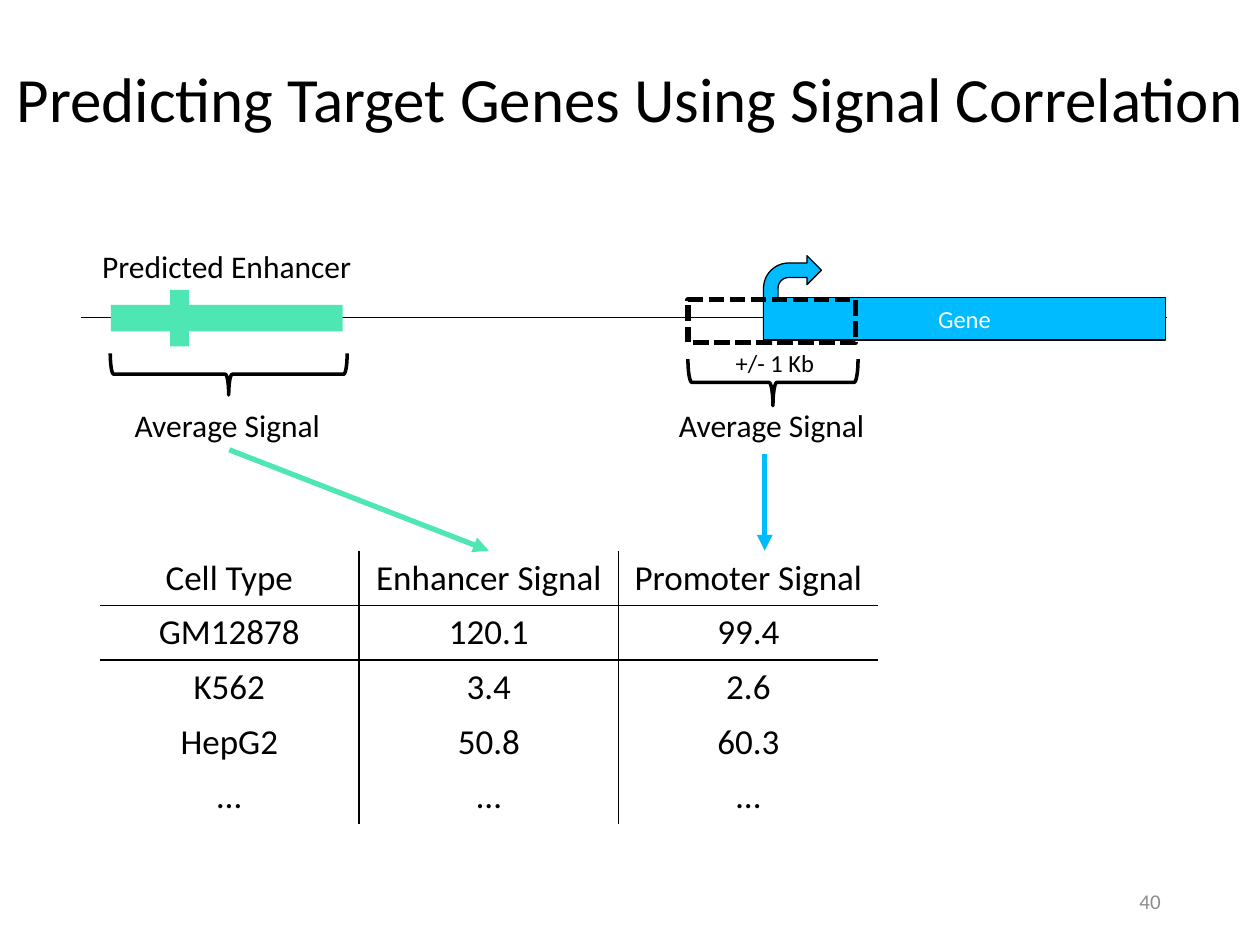
from pptx import Presentation
from pptx.dml.color import RGBColor
from pptx.enum.dml import MSO_LINE_DASH_STYLE as Dash
from pptx.enum.shapes import MSO_CONNECTOR, MSO_SHAPE as Shape
from pptx.enum.text import MSO_ANCHOR as Anchor, PP_ALIGN as Align
from pptx.oxml import parse_xml
from pptx.oxml.ns import nsdecls
from pptx.util import Inches, Pt

BLACK = RGBColor(0x00, 0x00, 0x00)
WHITE = RGBColor(0xFF, 0xFF, 0xFF)
GRAY = RGBColor(0x8C, 0x8C, 0x8C)
GREEN = RGBColor(0x4E, 0xE6, 0xB3)
BLUE = RGBColor(0x00, 0xBB, 0xFF)
PLAIN_TABLE = "{2D5ABB26-0587-4C30-8999-92F81FD0307C}"
SIGNALS = [
    ["Cell Type", "Enhancer Signal", "Promoter Signal"],
    ["GM12878", "120.1", "99.4"],
    ["K562", "3.4", "2.6"],
    ["HepG2", "50.8", "60.3"],
    ["…", "…", "…"],
]


def write(frame, text, size=18, color=BLACK, align=Align.CENTER, font="Calibri"):
    para = frame.paragraphs[0]
    para.alignment = align
    span = para.add_run()
    span.text = text
    span.font.name = font
    span.font.size = Pt(size)
    span.font.color.rgb = color


class Painter:
    """Draws styled elements on the current slide."""

    def __init__(self, page):
        self.shapes = page.shapes

    def label(self, text, at, anchor=Anchor.TOP, wrap=True, **style):
        box = self.shapes.add_textbox(*map(Inches, at))
        box.text_frame.word_wrap = wrap
        box.text_frame.vertical_anchor = anchor
        write(box.text_frame, text, **style)

    def shape(self, kind, at, fill=None, line=None, width=0.75, dash=None, rotation=0):
        shape = self.shapes.add_shape(kind, *map(Inches, at))
        shape.shadow.inherit = False
        shape.rotation = rotation
        if fill is None:
            shape.fill.background()
        else:
            shape.fill.solid()
            shape.fill.fore_color.rgb = fill
        if line is None:
            shape.line.fill.background()
        else:
            shape.line.color.rgb = line
            shape.line.width = Pt(width)
            if dash:
                shape.line.dash_style = dash
        return shape

    def brace(self, at):
        self.shape(Shape.LEFT_BRACE, at, line=BLACK, width=2, rotation=270)

    def line(self, start, end, color=BLACK, width=1, arrow=False):
        link = self.shapes.add_connector(
            MSO_CONNECTOR.STRAIGHT, *map(Inches, (*start, *end)))
        link.line.color.rgb = color
        link.line.width = Pt(width)
        if arrow:
            link.line._get_or_add_ln().append(
                parse_xml(f'<a:tailEnd {nsdecls("a")} type="triangle"/>'))
        link._element.spPr.append(parse_xml(f'<a:effectLst {nsdecls("a")}/>'))

    def table(self, rows, left, top, column_width, row_height):
        count = len(rows[0])
        frame = self.shapes.add_table(
            len(rows), count, Inches(left), Inches(top),
            Inches(column_width * count), Inches(row_height * len(rows)))
        frame._element.xpath(".//a:tableStyleId")[0].text = PLAIN_TABLE
        table = frame.table
        table.first_row = table.horz_banding = False
        for i, row in enumerate(rows):
            for j, text in enumerate(row):
                cell = table.cell(i, j)
                cell.fill.background()
                write(cell.text_frame, text, size=20)
                sides = {"L": j > 0, "R": j < count - 1, "T": i == 1, "B": i == 0}
                self.borders(cell, [side for side, shown in sides.items() if shown])

    def borders(self, cell, sides):
        properties = cell._tc.get_or_add_tcPr()
        for position, side in enumerate(sides):
            properties.insert(position, parse_xml(
                f'<a:ln{side} {nsdecls("a")} w="{Pt(1)}"><a:solidFill>'
                f'<a:srgbClr val="{BLACK}"/></a:solidFill></a:ln{side}>'))


def main():
    deck = Presentation()
    deck.slide_width, deck.slide_height = Inches(10), Inches(7.5)
    painter = Painter(deck.slides.add_slide(deck.slide_layouts[6]))

    painter.label("Predicting Target Genes Using Signal Correlation",
                  (0, 0.42, 10, 0.71), size=36)
    painter.line((0.64, 2.52), (9.26, 2.52))
    painter.shape(Shape.RECTANGLE, (0.88, 2.42, 1.84, 0.21), GREEN)
    painter.shape(Shape.BENT_ARROW, (6.06, 2.03, 0.46, 0.66), BLUE, BLACK)
    gene = painter.shape(Shape.RECTANGLE, (6.06, 2.36, 3.19, 0.34), BLUE, BLACK)
    gene.text_frame.vertical_anchor = Anchor.MIDDLE
    write(gene.text_frame, "Gene", size=14, color=WHITE)
    for patch in ((6.18, 2.43, 0.1, 0.08), (6.07, 2.3, 0.1, 0.13)):
        painter.shape(Shape.RECTANGLE, patch, BLUE)

    painter.table(SIGNALS, 0.79, 4.37, 2.06, 0.43)

    painter.label("+/- 1 Kb", (5.52, 2.71, 1.26, 0.34), size=14)
    painter.shape(Shape.RECTANGLE, (5.46, 2.38, 1.33, 0.34),
                  line=BLACK, width=3, dash=Dash.SQUARE_DOT)
    painter.label("40", (7.06, 6.95, 2.25, 0.4), anchor=Anchor.MIDDLE,
                  size=12, color=GRAY, align=Align.RIGHT)
    painter.shape(Shape.RECTANGLE, (1.35, 2.3, 0.15, 0.45), GREEN)
    painter.label("Predicted Enhancer", (0.61, 1.91, 2.38, 0.4))
    painter.brace((1.65, 2.03, 0.33, 1.88))
    painter.brace((5.95, 2.36, 0.37, 1.35))
    for left in (0.97, 5.29):
        painter.label("Average Signal", (left, 3.17, 1.69, 0.4),
                      wrap=False, align=Align.LEFT)
    painter.line((1.82, 3.57), (3.88, 4.37), GREEN, 3, arrow=True)
    painter.line((6.07, 3.6), (6.07, 4.37), BLUE, 3, arrow=True)

    deck.save("out.pptx")


if __name__ == "__main__":
    main()
